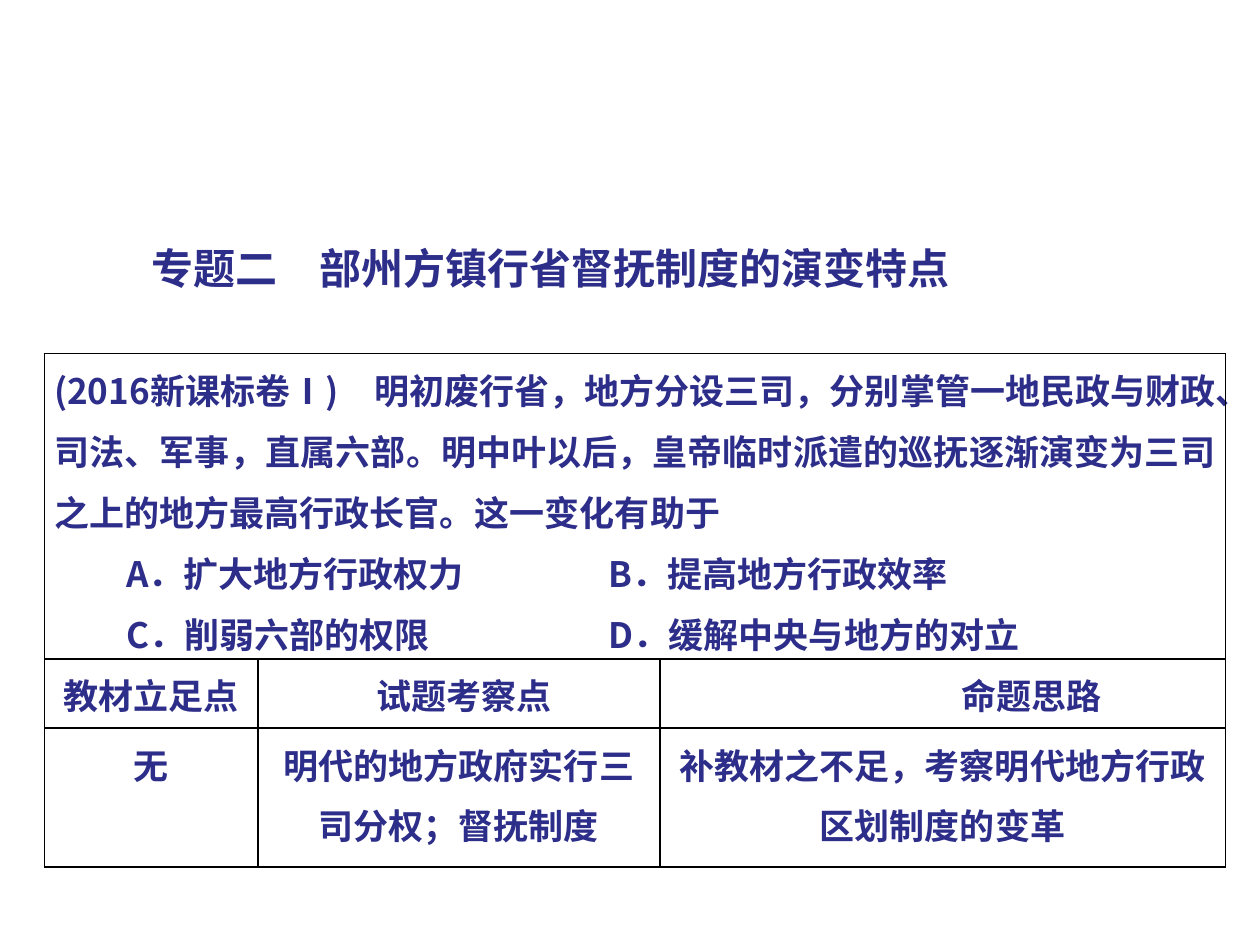
"""Build a slide with a topic title and an exam question table."""
from lxml import etree
from pptx import Presentation
from pptx import util as u
from pptx.dml.color import RGBColor
from pptx.enum import text
from pptx.oxml.ns import qn

NAVY = RGBColor(0x2D, 0x2D, 0x8A)
WHITE = RGBColor(0xFF, 0xFF, 0xFF)
BLACK = RGBColor(0, 0, 0)
FACE = "Noto Sans CJK SC"
MID = text.PP_ALIGN.CENTER
JUST = text.PP_ALIGN.JUSTIFY


def style(para, size, face):
    font = para.font
    font.name, font.size, font.bold = face, u.Pt(size), True
    font.color.rgb = NAVY
    for run in para.runs:
        east = etree.SubElement(run._r.get_or_add_rPr(), qn("a:ea"))
        east.set("typeface", FACE)


def frame(cell):
    props = cell._tc.get_or_add_tcPr()
    for side in ("lnL", "lnR", "lnT", "lnB"):
        line = etree.SubElement(props, qn(f"a:{side}"), w=str(u.Pt(1)))
        fill = etree.SubElement(line, qn("a:solidFill"))
        etree.SubElement(fill, qn("a:srgbClr"), val=str(BLACK))
    cell.fill.solid()
    cell.fill.fore_color.rgb = WHITE


deck = Presentation()
deck.slide_width, deck.slide_height = u.Cm(25.4), u.Cm(19.05)
slide = deck.slides.add_slide(deck.slide_layouts[6])

title = slide.shapes.add_textbox(u.Cm(2.8), u.Cm(4.55), u.Cm(21), u.Cm(1.68))
body = title.text_frame
body.word_wrap = True
body.vertical_anchor = text.MSO_ANCHOR.MIDDLE
body.text = "专题二　部州方镇行省督抚制度的演变特点"
style(body.paragraphs[0], 24, "Arial")

rows = [
    ["(2016新课标卷Ⅰ)　明初废行省，地方分设三司，分别掌管一地民政与财政、司法、军事，"
     "直属六部。明中叶以后，皇帝临时派遣的巡抚逐渐演变为三司之上的地方最高行政长官。"
     "这一变化有助于\n"
     "\tA．扩大地方行政权力\tB．提高地方行政效率\n"
     "\tC．削弱六部的权限\tD．缓解中央与地方的对立"],
    ["教材立足点", "试题考察点", "命题思路"],
    ["无", "明代的地方政府实行三司分权；督抚制度",
     "补教材之不足，考察明代地方行政区划制度的变革"],
]
wide = [4.3, 8.1, 11.4]
high = [6.15, 1.4, 2.8]
stops = [1.45, 11.18]
dents = {"试题考察点": 0.2, "命题思路": 3.6}

grid = slide.shapes.add_table(3, 3, u.Cm(0.9), u.Cm(7.13),
                              u.Cm(sum(wide)), u.Cm(sum(high))).table
for col, size in zip(grid.columns, wide):
    col.width = u.Cm(size)
for row, size in zip(grid.rows, high):
    row.height = u.Cm(size)
for cell in grid.iter_cells():
    frame(cell)
grid.cell(0, 0).merge(grid.cell(0, 2))

for r, row in enumerate(rows):
    for c, words in enumerate(row):
        cell = grid.cell(r, c)
        cell.margin_left = cell.margin_right = u.Cm(0.19)
        cell.margin_top = cell.margin_bottom = 0
        cell.text = words
        for para in cell.text_frame.paragraphs:
            para.alignment = MID if r else JUST
            para.line_spacing = 1.2
            style(para, 20, FACE)
            props = para._p.get_or_add_pPr()
            if words in dents:
                props.set("marL", "0")
                props.set("indent", str(u.Cm(dents[words])))
            if para.text.startswith("\t"):
                tabs = etree.Element(qn("a:tabLst"))
                for stop in stops:
                    etree.SubElement(tabs, qn("a:tab"), pos=str(u.Cm(stop)), algn="l")
                props.find(qn("a:defRPr")).addprevious(tabs)

deck.save("out.pptx")
